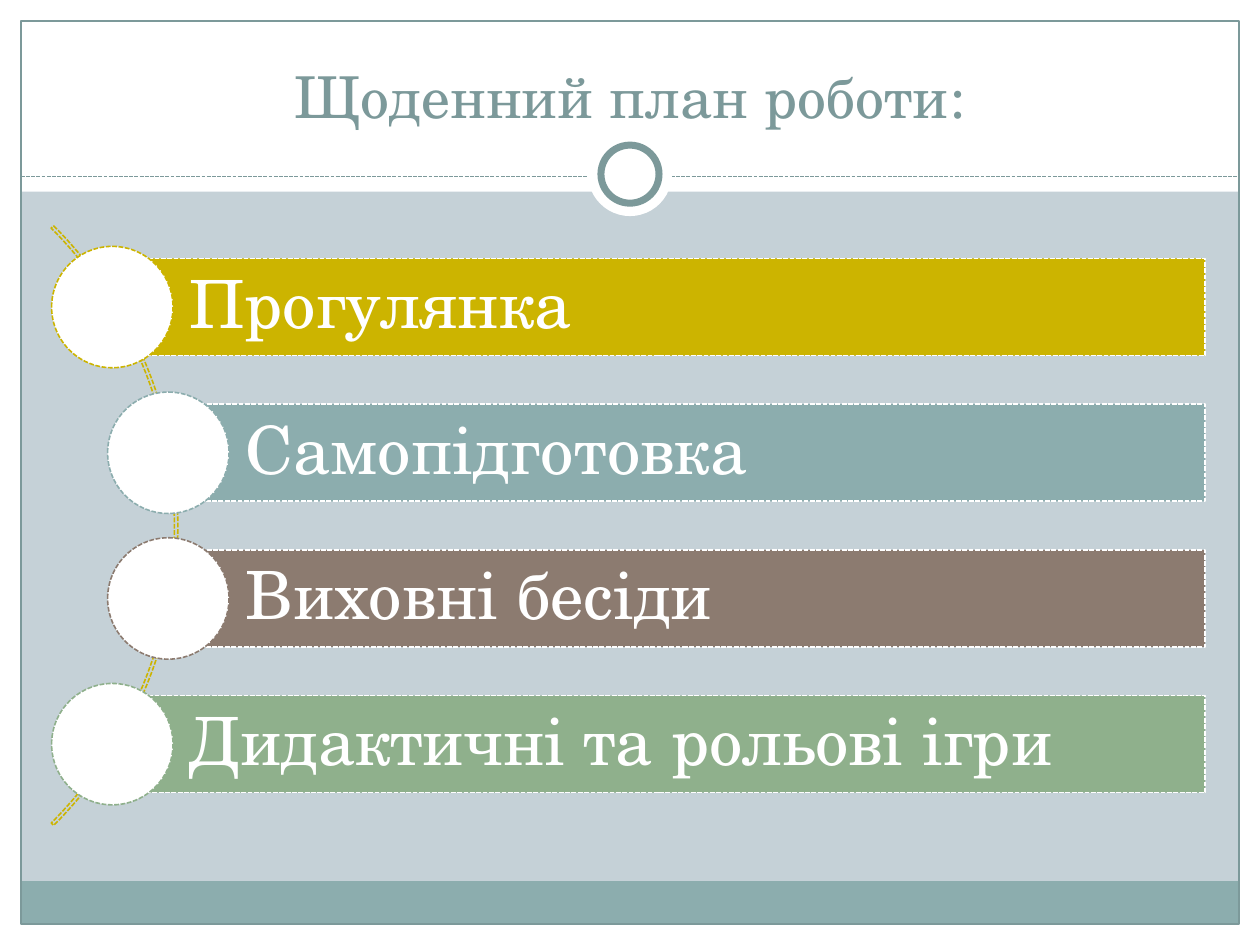
from lxml import etree
from pptx import Presentation
from pptx.dml.color import RGBColor
from pptx.enum import dml, shapes, text
from pptx.oxml.ns import qn
from pptx.util import Pt

COLORS = {
    "white": "FFFFFF", "background": "C5D1D7", "frame": "7C999A",
    "gold": "CCB400", "teal": "8CADAE", "brown": "8C7B70", "green": "8FB08C",
}
SHAPE = shapes.MSO_SHAPE
WIDTH, HEIGHT, MARGIN = 720, 540, 12


class Deck:
    font = "TeX Gyre Schola"

    def __init__(self):
        self.prs = Presentation()
        self.prs.slide_width, self.prs.slide_height = Pt(WIDTH), Pt(HEIGHT)
        self.s = self.prs.slides.add_slide(self.prs.slide_layouts[6])

    def rgb(self, name):
        return RGBColor.from_string(COLORS[name])

    def background(self, color):
        fill = self.s.background.fill
        fill.solid()
        fill.fore_color.rgb = self.rgb(color)

    def outline(self, line, color, width, dashed):
        line.color.rgb = self.rgb(color)
        line.width = Pt(width)
        if dashed:
            line.dash_style = dml.MSO_LINE.ROUND_DOT
            line._ln.find(qn("a:prstDash")).set("val", "sysDash")

    def shape(self, kind, box, fill=None, line=None, width=0.9, dashed=False):
        sp = self.s.shapes.add_shape(kind, *map(Pt, box))
        sp.shadow.inherit = False
        if fill:
            sp.fill.solid()
            sp.fill.fore_color.rgb = self.rgb(fill)
        else:
            sp.fill.background()
        if line:
            self.outline(sp.line, line, width, dashed)
        else:
            sp.line.fill.background()
        return sp

    def circle(self, x, y, size, **style):
        """Draw a circle centred on x, y."""
        return self.shape(SHAPE.OVAL, (x - size / 2, y - size / 2, size, size), **style)

    def rule(self, x1, x2, y, color):
        cx = self.s.shapes.add_connector(
            shapes.MSO_CONNECTOR.STRAIGHT, *map(Pt, (x1, y, x2, y)))
        self.outline(cx.line, color, 0.75, True)
        etree.SubElement(cx._element.spPr, qn("a:effectLst"))

    def add_words(self, sp, words, size, color, align, frame, spacing=None):
        tf = sp.text_frame
        for name, value in {"word_wrap": True, **frame}.items():
            setattr(tf, name, value)
        p = tf.paragraphs[0]
        p.alignment, p.line_spacing = align, spacing
        r = p.add_run()
        r.text = words
        for name, value in {"name": self.font, "size": Pt(size)}.items():
            setattr(r.font, name, value)
        r.font.color.rgb = self.rgb(color)

    def title(self, words, box):
        sp = self.s.shapes.add_textbox(*map(Pt, box))
        self.add_words(sp, words, 33, "frame", text.PP_ALIGN.CENTER,
                       {"vertical_anchor": text.MSO_ANCHOR.BOTTOM})

    def bar(self, words, box, color):
        sp = self.shape(SHAPE.RECTANGLE, box, fill=color, line="white", dashed=True)
        frame = {"vertical_anchor": text.MSO_ANCHOR.MIDDLE, "margin_left": Pt(44)}
        frame.update({f"margin_{side}": Pt(8) for side in ("top", "right", "bottom")})
        self.add_words(sp, words, 38, "white", text.PP_ALIGN.LEFT, frame, 0.9)

    def arc(self, box, color):
        sp = self.shape(SHAPE.BLOCK_ARC, box, line=color, dashed=True)
        for i, value in enumerate((189, 27, 0.004)):
            sp.adjustments[i] = value


def draw_frame(deck):
    right, bottom = WIDTH - MARGIN, HEIGHT - MARGIN
    inner = right - MARGIN
    deck.background("background")
    for box in ((0, bottom, WIDTH, MARGIN), (0, 0, WIDTH, 109.5),
                (0, 0, MARGIN, HEIGHT), (right, 0, MARGIN, HEIGHT)):
        deck.shape(SHAPE.RECTANGLE, box, fill="white")
    deck.shape(SHAPE.RECTANGLE, (MARGIN, 503.5, inner, bottom - 503.5), fill="teal")
    deck.shape(SHAPE.RECTANGLE, (MARGIN, MARGIN, inner, bottom - MARGIN),
               line="frame", width=0.75)
    deck.rule(MARGIN, right, 100.8, "frame")
    deck.circle(WIDTH / 2, 99.5, 48, fill="white")
    deck.circle(WIDTH / 2, 99.5, 33.2, fill="white", line="frame", width=4)


def draw_plan(deck):
    plan = (("Прогулянка", "gold", 64.2), ("Самопідготовка", "teal", 96.2),
            ("Виховні бесіди", "brown", 96.2),
            ("Дидактичні та рольові ігри", "green", 64.2))
    first, pitch, right, bar_height, arc_size = 175.5, 83.25, 688.7, 55.5, 484.6
    middle = first + pitch * (len(plan) - 1) / 2
    deck.arc((-383, middle - arc_size / 2, arc_size, arc_size), "gold")
    for i, (words, color, x) in enumerate(plan):
        y = first + i * pitch
        deck.bar(words, (x, y - bar_height / 2, right - x, bar_height), color)
        deck.circle(x, y, 69.4, fill="white", line=color, dashed=True)


def main():
    deck = Deck()
    draw_frame(deck)
    deck.title("Щоденний план роботи:", (24, 18, 672, 60))
    draw_plan(deck)
    deck.prs.save("out.pptx")


if __name__ == "__main__":
    main()
